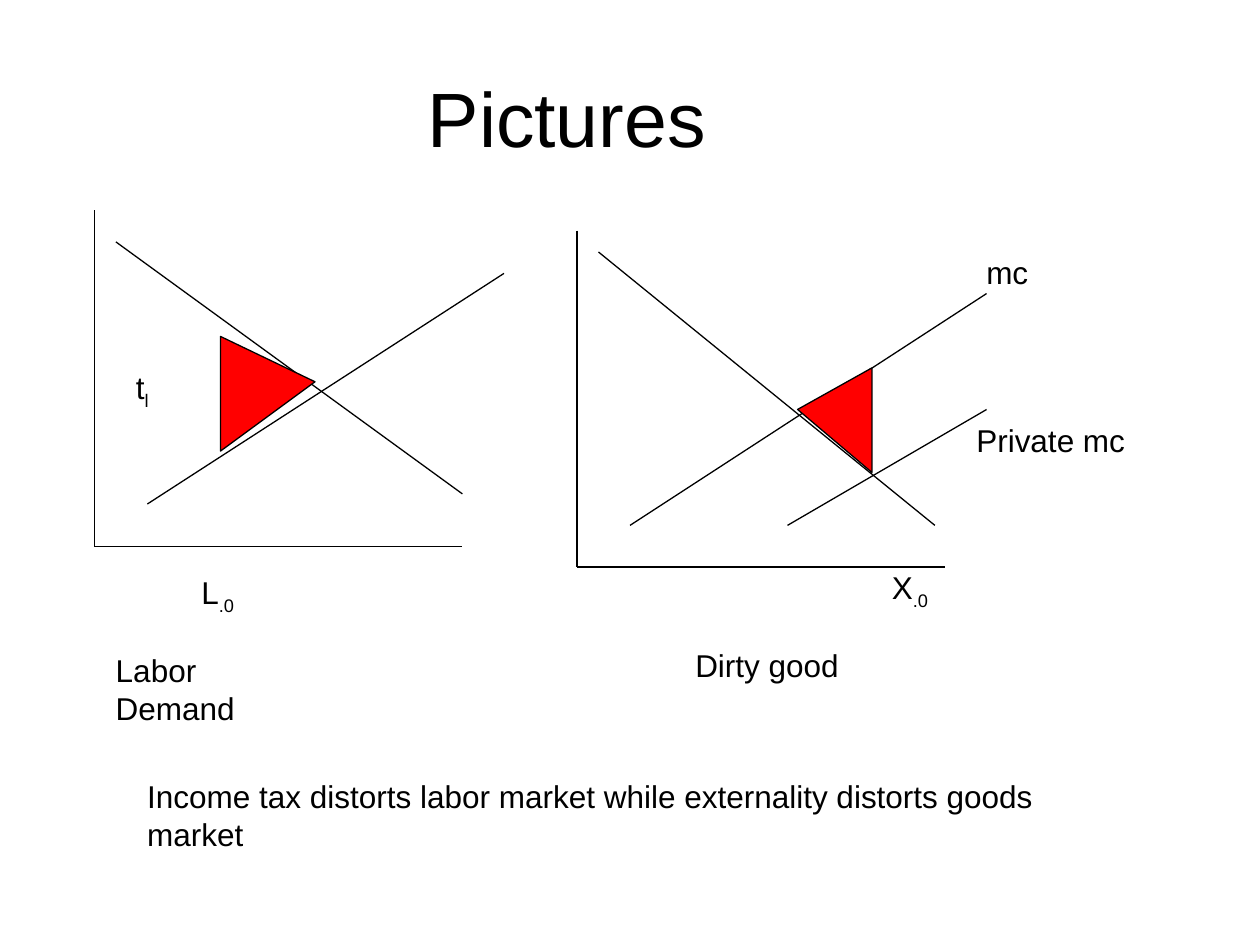
from pptx import Presentation
from pptx.dml.color import RGBColor
from pptx.enum.shapes import MSO_CONNECTOR
from pptx.enum.text import MSO_ANCHOR, MSO_AUTO_SIZE, PP_ALIGN
from pptx.oxml.ns import qn
from pptx.util import Inches, Pt
from lxml.etree import SubElement

BLACK = "000000"
RED = "FF0000"
AXIS_WIDTH, AXIS_HEIGHT = 2.92, 2.67
LABEL_HEIGHT = 0.4


def color(value):
    return RGBColor.from_string(value)


def add_text(page, text, left, top, width, height=LABEL_HEIGHT, size=18,
             subscript="", align=PP_ALIGN.LEFT, anchor=MSO_ANCHOR.TOP, wrap=False):
    box = page.shapes.add_textbox(*map(Inches, (left, top, width, height)))
    frame = box.text_frame
    frame.word_wrap = wrap
    frame.auto_size = MSO_AUTO_SIZE.NONE if wrap else MSO_AUTO_SIZE.SHAPE_TO_FIT_TEXT
    frame.vertical_anchor = anchor
    para = frame.paragraphs[0]
    para.alignment = align
    for part in filter(None, (text, subscript)):
        span = para.add_run()
        span.text = part
        span.font.name = "Arial"
        span.font.size = Pt(size)
        span.font.color.rgb = color(BLACK)
    if subscript:
        span.font._element.set("baseline", "-25000")


def style_line(line):
    line.color.rgb = color(BLACK)
    line.width = Pt(0.75)


def add_line(page, start, end):
    line = page.shapes.add_connector(
        MSO_CONNECTOR.STRAIGHT, *map(Inches, (*start, *end)))
    style_line(line.line)
    SubElement(line._element.spPr, qn("a:effectLst"))


def add_loss_triangle(page, corners):
    first, *others = [tuple(map(Inches, corner)) for corner in corners]
    builder = page.shapes.build_freeform(*first)
    builder.add_line_segments(others, close=True)
    triangle = builder.convert_to_shape()
    triangle.shadow.inherit = False
    triangle.fill.solid()
    triangle.fill.fore_color.rgb = color(RED)
    style_line(triangle.line)


def add_market(page, left, top, curves, triangle, labels):
    """Draw axes, curves, loss triangle and labels, all measured from the axes' top left."""
    def place(point):
        return left + point[0], top + point[1]

    axes = [((0, 0), (0, AXIS_HEIGHT)),
            ((0, AXIS_HEIGHT), (AXIS_WIDTH, AXIS_HEIGHT))]
    for start, end in axes + curves:
        add_line(page, place(start), place(end))
    add_loss_triangle(page, map(place, triangle))
    for text, subscript, point, width in labels:
        add_text(page, text, *place(point), width, subscript=subscript)


def add_labor_market(page, left, top):
    add_market(
        page, left, top,
        curves=[((0.17, 0.25), (2.92, 2.25)), ((0.42, 2.33), (3.25, 0.5))],
        triangle=[(1.75, 1.36), (1, 1), (1, 1.91)],
        labels=[("L", ".0", (0.75, 2.83), 0.48),
                ("t", "l", (0.23, 1.2), 0.31),
                ("Labor Demand", "", (0.07, 3.45), 1.85)])


def add_goods_market(page, left, top):
    add_market(
        page, left, top,
        curves=[((0.17, 0.17), (2.84, 2.34)), ((0.42, 2.34), (3.25, 0.5)),
                ((3.25, 1.42), (1.67, 2.34))],
        triangle=[(1.75, 1.42), (2.34, 1.09), (2.34, 1.92)],
        labels=[("X", ".0", (2.4, 2.63), 0.51),
                ("Dirty good", "", (0.84, 3.25), 1.34),
                ("Private mc", "", (3.07, 1.46), 1.38),
                ("mc", "", (3.15, 0.13), 0.53)])


def main():
    deck = Presentation()
    deck.slide_width, deck.slide_height = Inches(10), Inches(7.5)
    page = deck.slides.add_slide(deck.slide_layouts[6])
    add_text(page, "Pictures", 0, 0.3, 9, 1.25, size=44,
             align=PP_ALIGN.CENTER, anchor=MSO_ANCHOR.MIDDLE, wrap=True)
    add_labor_market(page, 0.75, 1.67)
    add_goods_market(page, 4.58, 1.83)
    add_text(page, "Income tax distorts labor market while externality "
             "distorts goods market", 1.07, 6.12, 8.06)
    deck.save("out.pptx")


if __name__ == "__main__":
    main()
